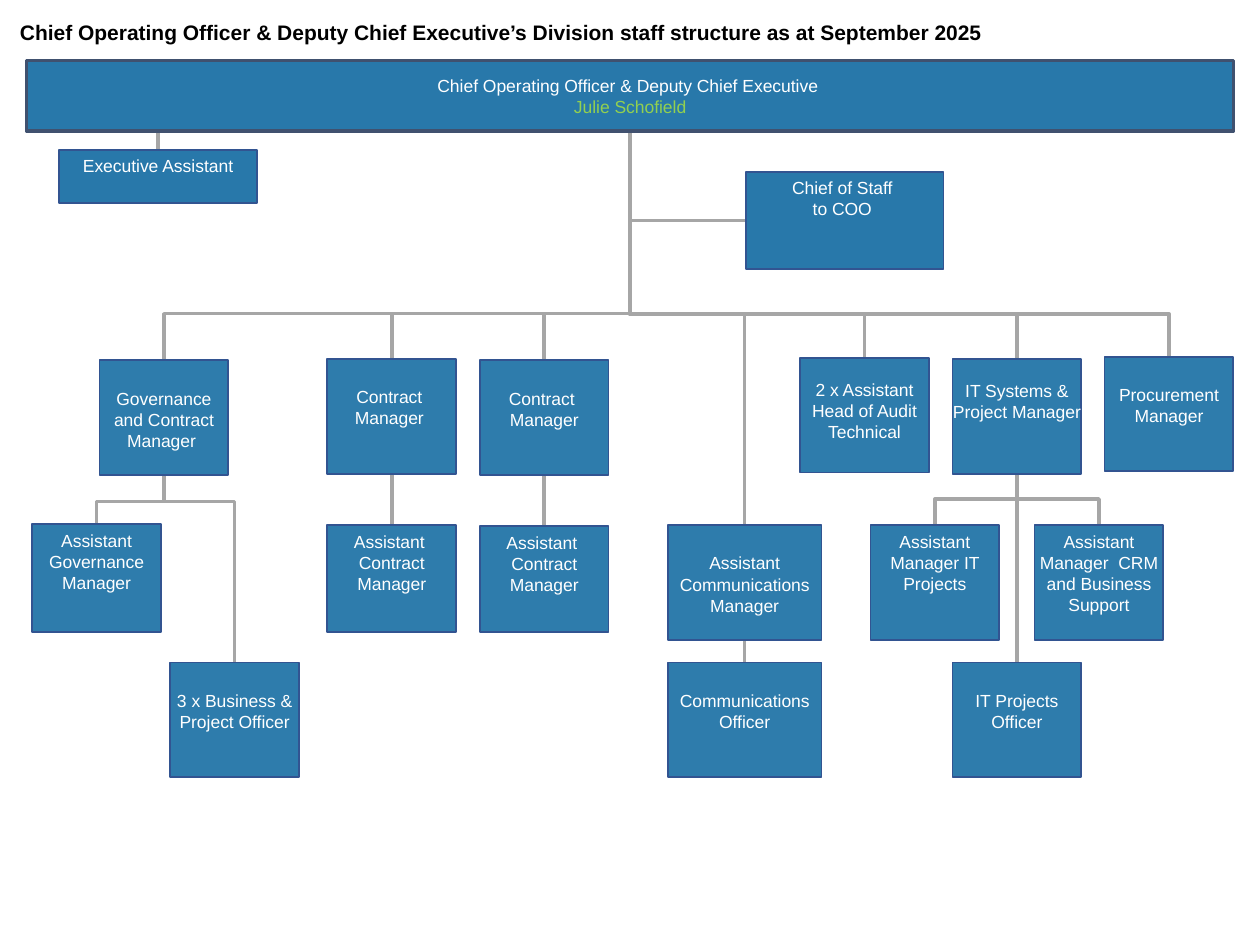
from dataclasses import dataclass

from lxml.etree import SubElement
from pptx import Presentation
from pptx.dml.color import RGBColor
from pptx.enum.shapes import MSO_CONNECTOR, MSO_SHAPE
from pptx.enum.text import MSO_ANCHOR, PP_ALIGN
from pptx.oxml.ns import qn
from pptx.util import Pt

COLOURS = {
    "text": "FFFFFF",
    "title": "000000",
    "name": "92D050",
    "box": "2878AA",
    "border": "325491",
    "bar_border": "40516F",
    "line": "A6A6A6",
}
FONT = "Arial"
BLANK_LAYOUT = 6
WIDTH, HEIGHT = 73.6, 65.5
WIDE = 87.8
LINE = 12
NARROW_INSETS = (1.4, 3.6)
LOWERED_INSETS = (1.4, 3.6 + LINE)
TOP, BOTTOM = 0, 2
COO_X, COO_BOTTOM = 360, 74.9
MANAGER_BUS, GOVERNANCE_BUS, IT_BUS = 179.3, 286.5, 285.1


@dataclass(frozen=True)
class Box:
    text: str
    left: float
    top: float
    width: float = WIDTH
    height: float = HEIGHT
    insets: tuple[float, float] = LOWERED_INSETS
    alpha: int = 97
    border: str = "border"
    border_width: float = 1
    anchor: MSO_ANCHOR = MSO_ANCHOR.TOP

    @property
    def centre(self) -> float:
        return self.left + self.width / 2

    @property
    def bottom(self) -> float:
        return self.top + self.height


BOXES = {
    "coo": Box("Chief Operating Officer & Deputy Chief Executive \nJulie Schofield",
               15.1, 34.6, 689.8, 40.3, (7.2, 3.6), 100, "bar_border", 1.75,
               MSO_ANCHOR.MIDDLE),
    "executive_assistant": Box("Executive Assistant", 33.8, 85.7, 113, 30.2, (2.9, 2.9), 100),
    "chief_of_staff": Box("Chief of Staff \nto COO ", 426.2, 98.4, 113, 55.4, (2.9, 2.9), 100),
    "governance": Box("Governance and Contract Manager ", 56.9, 205.9),
    "contract_1": Box("Contract \nManager ", 187.1, 205.2),
    "contract_2": Box("Contract \nManager", 274.2, 205.9),
    "audit": Box("2 x Assistant Head of Audit Technical", 457.2, 204.5, insets=(0, LINE)),
    "it_systems": Box("IT Systems & Project Manager", 544.3, 205.2, insets=(0, LINE)),
    "procurement": Box("Procurement Manager", 631.2, 203.8),
    "assistant_governance": Box("Assistant Governance\nManager", 18.4, 299.4, height=61.8,
                                insets=NARROW_INSETS),
    "assistant_contract_1": Box("Assistant \nContract Manager", 187.1, 300.1, height=61.1,
                                insets=NARROW_INSETS),
    "assistant_contract_2": Box("Assistant \nContract Manager", 274.2, 300.6, height=60.6,
                                insets=NARROW_INSETS),
    "assistant_communications": Box("Assistant Communications Manager", 381.6, 300.1, WIDE,
                                    insets=(0, 3.6 + LINE)),
    "assistant_it_projects": Box("Assistant Manager IT Projects", 497.4, 300.1,
                                 insets=NARROW_INSETS),
    "assistant_crm": Box("Assistant Manager  CRM and Business Support", 591.2, 300.1,
                         insets=NARROW_INSETS),
    "business_officer": Box("3 x Business & Project Officer", 97.3, 378.6),
    "communications_officer": Box("Communications Officer", 381.6, 378.6, WIDE),
    "it_officer": Box("IT Projects Officer", 544.3, 378.6),
}

STRAIGHT_LINKS = [
    ("contract_1", "assistant_contract_1"),
    ("contract_2", "assistant_contract_2"),
    ("assistant_communications", "communications_officer"),
    ("it_systems", "it_officer"),
]
# Each parent box, the height of its horizontal bus, and the boxes below it.
BRANCHES = [
    ("coo", MANAGER_BUS, ["governance", "contract_1", "contract_2", "assistant_communications",
                          "audit", "it_systems", "procurement"]),
    ("governance", GOVERNANCE_BUS, ["assistant_governance", "business_officer"]),
    ("it_systems", IT_BUS, ["assistant_it_projects", "assistant_crm"]),
]


def colour(name: str) -> RGBColor:
    return RGBColor.from_string(COLOURS[name])


def add_title(slide, text: str) -> None:
    shape = slide.shapes.add_textbox(Pt(4.3), Pt(8.6), Pt(570), Pt(21))
    frame = shape.text_frame
    frame.word_wrap = True
    frame.vertical_anchor = MSO_ANCHOR.MIDDLE
    frame.text = text
    paragraph = frame.paragraphs[0]
    paragraph.line_spacing = 0.9
    paragraph.font.name = FONT
    paragraph.font.size = Pt(12)
    paragraph.font.bold = True
    paragraph.font.color.rgb = colour("title")


def add_box(slide, box: Box):
    shape = slide.shapes.add_shape(MSO_SHAPE.RECTANGLE, Pt(box.left), Pt(box.top),
                                   Pt(box.width), Pt(box.height))
    shape.shadow.inherit = False
    shape.fill.solid()
    shape.fill.fore_color.rgb = colour("box")
    if box.alpha < 100:
        fill_colour = shape.element.spPr.find(qn("a:solidFill"))[0]
        SubElement(fill_colour, qn("a:alpha"), val=str(box.alpha * 1000))
    shape.line.color.rgb = colour(box.border)
    shape.line.width = Pt(box.border_width)
    frame = shape.text_frame
    frame.word_wrap = True
    frame.vertical_anchor = box.anchor
    side, top = box.insets
    frame.margin_left = frame.margin_right = Pt(side)
    frame.margin_top = Pt(top)
    frame.margin_bottom = Pt(min(top, 3.6))
    frame.text = box.text
    for paragraph in frame.paragraphs:
        paragraph.alignment = PP_ALIGN.CENTER
        paragraph.font.name = FONT
        paragraph.font.size = Pt(10)
        paragraph.font.color.rgb = colour("text")
    return shape


def add_line(slide, kind: MSO_CONNECTOR, left: float, top: float, right: float, bottom: float,
             width: float = 2):
    """Draw a grey connector behind everything drawn so far."""
    connector = slide.shapes.add_connector(kind, Pt(left), Pt(top), Pt(right), Pt(bottom))
    connector.line.color.rgb = colour("line")
    connector.line.width = Pt(width)
    SubElement(connector.element.spPr, qn("a:effectLst"))
    connector.element.getparent().insert(2, connector.element)
    return connector


def add_elbow(slide, start: tuple[float, float], end: tuple[float, float],
              bus: float | None = None) -> None:
    """Go down from start, turn at the bus and drop to end; without a bus, turn once."""
    (start_x, start_y), (end_x, end_y) = start, end
    length, breadth = end_y - start_y, abs(end_x - start_x)
    left = (start_x + end_x - length) / 2
    top = (start_y + end_y - breadth) / 2
    connector = add_line(slide, MSO_CONNECTOR.ELBOW, left, top, left + length, top + breadth)
    properties = connector.element.spPr
    transform = properties.find(qn("a:xfrm"))
    goes_right = end_x > start_x
    transform.set("rot", str((270 if goes_right else 90) * 60000))
    if goes_right:
        transform.set("flipH", "1")
    geometry = properties.find(qn("a:prstGeom"))
    if bus is None:
        geometry.set("prst", "bentConnector2")
    else:
        turn = round((bus - start_y) / length * 100000)
        SubElement(geometry.find(qn("a:avLst")), qn("a:gd"), name="adj1", fmla=f"val {turn}")


def main() -> None:
    presentation = Presentation()
    presentation.slide_width, presentation.slide_height = Pt(720), Pt(540)
    slide = presentation.slides.add_slide(presentation.slide_layouts[BLANK_LAYOUT])
    add_title(slide, "Chief Operating Officer & Deputy Chief Executive’s Division "
                     "staff structure as at September 2025")
    shapes = {name: add_box(slide, box) for name, box in BOXES.items()}
    shapes["coo"].text_frame.paragraphs[1].font.color.rgb = colour("name")

    for upper, lower in STRAIGHT_LINKS:
        start, end = BOXES[upper], BOXES[lower]
        connector = add_line(slide, MSO_CONNECTOR.STRAIGHT, start.centre, start.bottom,
                             end.centre, end.top)
        connector.begin_connect(shapes[upper], BOTTOM)
        connector.end_connect(shapes[lower], TOP)

    assistant = BOXES["executive_assistant"]
    connector = add_line(slide, MSO_CONNECTOR.STRAIGHT, assistant.centre, COO_BOTTOM,
                         assistant.centre, assistant.top, 2.25)
    connector.end_connect(shapes["executive_assistant"], TOP)

    for parent, bus, children in BRANCHES:
        start = (BOXES[parent].centre, BOXES[parent].bottom)
        for child in children:
            add_elbow(slide, start, (BOXES[child].centre, BOXES[child].top), bus)
    staff = BOXES["chief_of_staff"]
    add_elbow(slide, (COO_X, COO_BOTTOM), (staff.left, staff.top + staff.height / 2))
    presentation.save("out.pptx")


if __name__ == "__main__":
    main()
